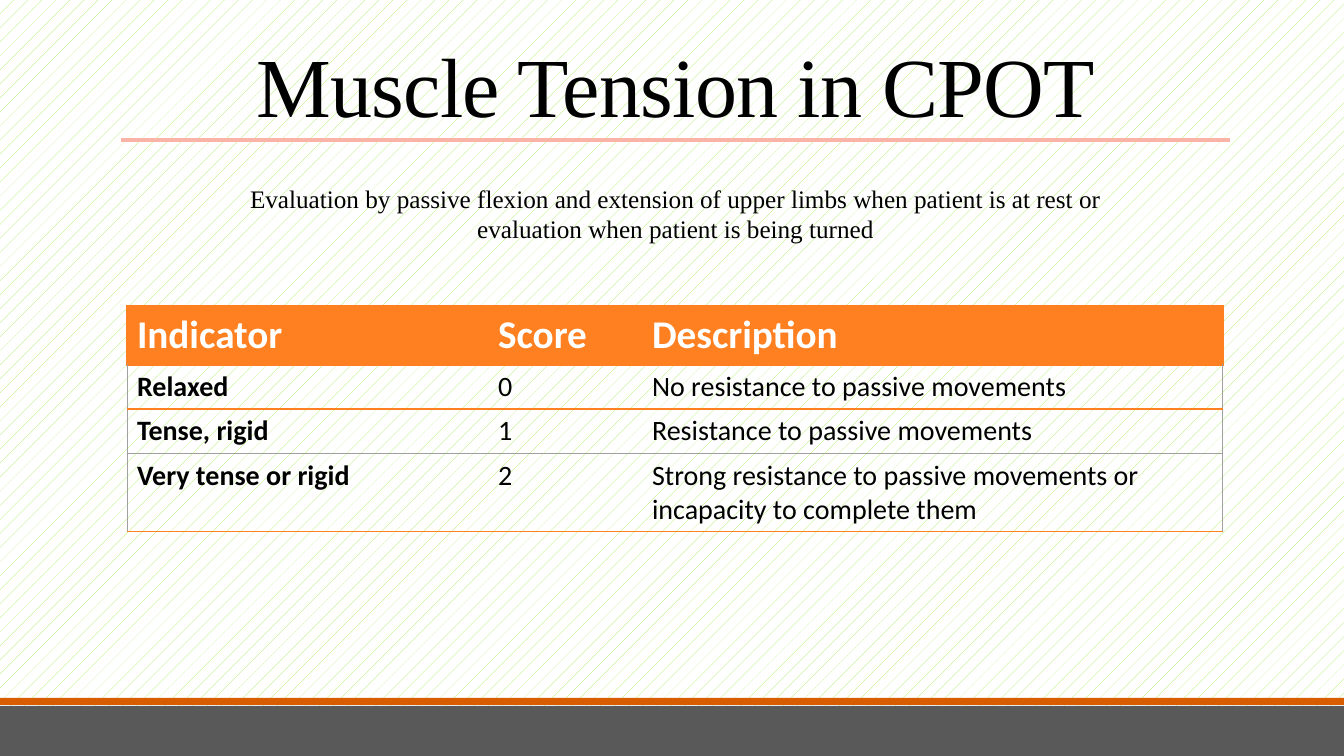
"""Build the slide on muscle tension scoring in CPOT."""
from lxml.etree import SubElement
from pptx import Presentation
from pptx.dml.color import RGBColor
from pptx.enum.dml import MSO_PATTERN
from pptx.enum.shapes import MSO_CONNECTOR, MSO_SHAPE
from pptx.enum.text import MSO_ANCHOR, PP_ALIGN
from pptx.oxml.ns import qn
from pptx.util import Pt

TITLE = "Muscle Tension in CPOT"
INTRO = ("Evaluation by passive flexion and extension of upper limbs when patient "
         "is at rest or evaluation when patient is being turned")
ROWS = [
    ("Indicator", "Score", "Description"),
    ("Relaxed", "0", "No resistance to passive movements"),
    ("Tense, rigid", "1", "Resistance to passive movements"),
    ("Very tense or rigid", "2",
     "Strong resistance to passive movements or incapacity to complete them"),
]
COLORS = {"black": "000000", "white": "FFFFFF", "orange": "FF8021", "grey": "A0A0A0",
          "footer": "595959", "stripe": "D85C00", "rule": "F9B3A7", "pattern": "A7EA52"}
SERIF, SANS = "Times New Roman", "Calibri"
SLIDE_W, SLIDE_H = 1344, 756
BARS = [((0, 706, SLIDE_W, 50), "footer"), ((0, 698, SLIDE_W, 7), "stripe")]
RULE = (121, 140, 1230, 140)
TITLE_BOX = (121, 31, 1109, 109)
INTRO_BOX = (208, 178, 935, 71)
TABLE_AT = (127, 306)
COL_W = (361, 154, 581)
ROW_H = (59, 44, 45, 78)
ROW_LINES = ("orange", "orange", "orange", "grey", "orange")
EMU_PER_PX = 12192000 / SLIDE_W


def px(*lengths):
    return [round(n * EMU_PER_PX) for n in lengths]


def rgb(name):
    return RGBColor.from_string(COLORS[name])


def write(p, text, color, **font):
    r = p.add_run()
    r.text = text
    r.font.color.rgb = rgb(color)
    for key, value in font.items():
        setattr(r.font, key, value)
    return r


def add_text(s, box, text, size, anchor):
    tf = s.shapes.add_textbox(*px(*box)).text_frame
    tf.word_wrap = True
    tf.vertical_anchor = anchor
    p = tf.paragraphs[0]
    p.alignment = PP_ALIGN.CENTER
    return p, write(p, text, "black", name=SERIF, size=Pt(size))


def set_border(cell, side, color):
    ln = SubElement(cell._tc.get_or_add_tcPr(), qn(f"a:ln{side}"))
    if color is None:
        ln.set("w", "0")
        SubElement(ln, qn("a:noFill"))
        return
    ln.set("w", str(Pt(0.75 if color == "grey" else 1)))
    fill = SubElement(ln, qn("a:solidFill"))
    SubElement(fill, qn("a:srgbClr"), val=COLORS[color])


def add_scores(s):
    table = s.shapes.add_table(len(ROWS), len(COL_W), *px(*TABLE_AT, sum(COL_W), sum(ROW_H))).table
    table.horz_banding = False
    for col, width in zip(table.columns, px(*COL_W)):
        col.width = width
    for row, height in zip(table.rows, px(*ROW_H)):
        row.height = height
    for i, texts in enumerate(ROWS):
        header = i == 0
        edge = "orange" if header else "grey"
        for j, text in enumerate(texts):
            cell = table.cell(i, j)
            borders = {"L": edge if j == 0 else None,
                       "R": edge if j == len(texts) - 1 else None,
                       "T": ROW_LINES[i], "B": ROW_LINES[i + 1]}
            for side, color in borders.items():
                set_border(cell, side, color)
            if header:
                cell.fill.solid()
                cell.fill.fore_color.rgb = rgb("orange")
            else:
                cell.fill.background()
            write(cell.text_frame.paragraphs[0], text, "white" if header else "black",
                  name=SANS, size=Pt(28 if header else 20), bold=header or j == 0)


def main():
    prs = Presentation()
    prs.slide_width, prs.slide_height = px(SLIDE_W, SLIDE_H)
    s = prs.slides.add_slide(prs.slide_layouts[6])
    fill = s.background.fill
    fill.patterned()
    fill.pattern = MSO_PATTERN.PERCENT_5
    fill.fore_color.rgb = rgb("pattern")
    fill.back_color.rgb = rgb("white")

    for box, color in BARS:
        bar = s.shapes.add_shape(MSO_SHAPE.RECTANGLE, *px(*box))
        bar.shadow.inherit = False
        bar.fill.solid()
        bar.fill.fore_color.rgb = rgb(color)
        bar.line.fill.background()

    rule = s.shapes.add_connector(MSO_CONNECTOR.STRAIGHT, *px(*RULE))
    rule.line.color.rgb = rgb("rule")
    rule.line.width = Pt(2.25)
    SubElement(rule._element.spPr, qn("a:effectLst"))

    p, r = add_text(s, TITLE_BOX, TITLE, 60, MSO_ANCHOR.BOTTOM)
    p.line_spacing = 0.85
    r.font._element.set("spc", "-50")
    add_scores(s)
    add_text(s, INTRO_BOX, INTRO, 18, MSO_ANCHOR.TOP)
    prs.save("out.pptx")


if __name__ == "__main__":
    main()
